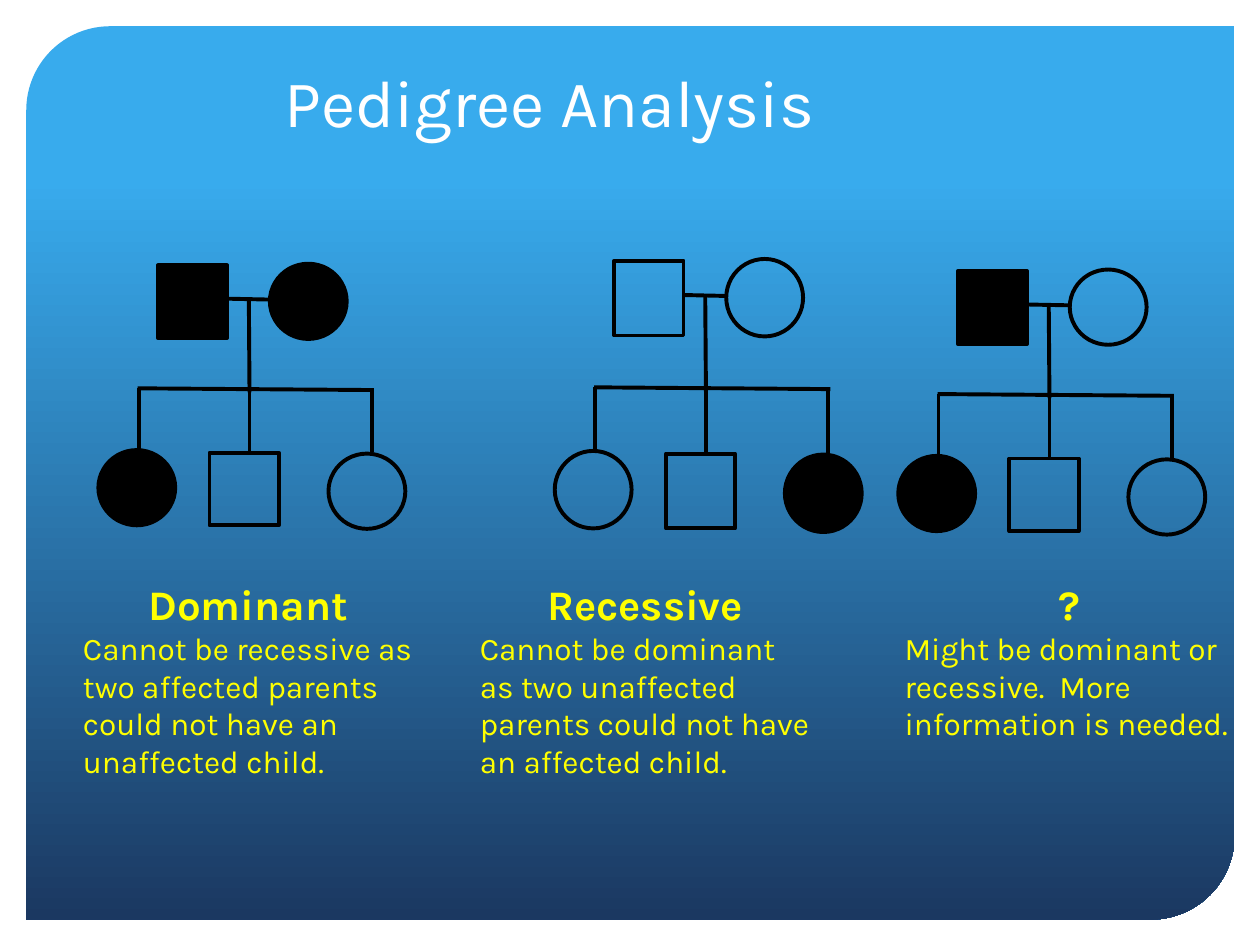
import pptx
import pptx.dml.color
import pptx.enum.shapes
import pptx.enum.text
import pptx.oxml.ns
import pptx.util
from lxml import etree

Pt = pptx.util.Pt
RGBColor = pptx.dml.color.RGBColor
SHAPE = pptx.enum.shapes.MSO_SHAPE
ALIGN = pptx.enum.text.PP_ALIGN
ANCHOR = pptx.enum.text.MSO_ANCHOR

BLACK = RGBColor(0x00, 0x00, 0x00)
WHITE = RGBColor(0xFF, 0xFF, 0xFF)
YELLOW = RGBColor(0xFF, 0xFF, 0x00)
SKY = RGBColor(0x38, 0xAB, 0xED)
NAVY = RGBColor(0x1B, 0x38, 0x61)

FONT = "Karla"
LINE_WIDTH = 2.25
TITLE = {"size": Pt(38), "bold": False}
HEADING = {"size": Pt(24), "bold": True}
BODY = {"size": Pt(18), "bold": False}

# Family members: shape, left, top, width, height within a pedigree
MALE, FEMALE = SHAPE.RECTANGLE, SHAPE.OVAL
FATHER = (MALE, 34, 1, 39.6, 41.5)
MOTHER = (FEMALE, 98, 0, 43.9, 43)
LEFT_DAUGHTER = (FEMALE, 0, 106.5, 43.9, 43)
SON = (MALE, 63.5, 108, 39.6, 41.5)
RIGHT_DAUGHTER = (FEMALE, 131.5, 108.5, 43.9, 43)
FAMILY = (FATHER, MOTHER, LEFT_DAUGHTER, RIGHT_DAUGHTER, SON)

# Family lines: start x, start y, end x, end y within a pedigree
FAMILY_LINES = (
    (73.5, 20, 98, 20.5),
    (86, 19.5, 86.4, 73.5),
    (22.5, 71.2, 157.5, 72.2),
    (86.4, 72, 86.4, 107.5),
    (23, 71.2, 23, 106.5),
    (156.3, 72, 156.3, 107.5),
)

# Pedigrees: left, top, vertical stretch, affected members
PEDIGREES = (
    (317, 148, 1.03, (RIGHT_DAUGHTER,)),
    (513.3, 154, 1, (FATHER, LEFT_DAUGHTER)),
    (56.2, 150.7, 1, (FATHER, MOTHER, LEFT_DAUGHTER)),
)

# Captions: left, heading, explanation
CAPTIONS = (
    (40.3, "Dominant", "Cannot be recessive as two affected parents "
                       "could not have an unaffected child."),
    (267.1, "Recessive", "Cannot be dominant as two unaffected parents "
                         "could not have an affected child."),
    (509.8, "?", "Might be dominant or recessive.  More information is needed."),
)


def add_background(slide):
    panel = slide.shapes.add_shape(
        SHAPE.ROUND_2_DIAG_RECTANGLE, Pt(15), Pt(15), Pt(690.5), Pt(510.5))
    panel.adjustments[0] = 0.094
    panel.adjustments[1] = 0
    panel.shadow.inherit = False
    panel.line.fill.background()
    panel.fill.gradient()
    panel.fill.gradient_angle = 270
    for stop, (position, color) in zip(panel.fill.gradient_stops,
                                       ((0.17, SKY), (1, NAVY))):
        stop.position = position
        stop.color.rgb = color


def add_text(slide, left, top, width, height, color, paragraphs, anchor=ANCHOR.TOP):
    """Add a wrapped text box; paragraphs holds (text, format, alignment)."""
    frame = slide.shapes.add_textbox(Pt(left), Pt(top), Pt(width), Pt(height)).text_frame
    frame.word_wrap = True
    frame.vertical_anchor = anchor
    for index, (text, text_format, alignment) in enumerate(paragraphs):
        paragraph = frame.add_paragraph() if index else frame.paragraphs[0]
        paragraph.text = text
        paragraph.alignment = alignment
        font = paragraph.runs[0].font
        for name, value in {"name": FONT, **text_format}.items():
            setattr(font, name, value)
        font.color.rgb = color


def draw_outline(element):
    element.line.color.rgb = BLACK
    element.line.width = Pt(LINE_WIDTH)


def add_member(group, kind, left, top, width, height, affected):
    shape = group.shapes.add_shape(kind, Pt(left), Pt(top), Pt(width), Pt(height))
    shape.shadow.inherit = False
    draw_outline(shape)
    if affected:
        shape.fill.solid()
        shape.fill.fore_color.rgb = BLACK
    else:
        shape.fill.background()


def add_line(group, *ends):
    connector = group.shapes.add_connector(
        pptx.enum.shapes.MSO_CONNECTOR.STRAIGHT, *(Pt(end) for end in ends))
    draw_outline(connector)
    properties = connector._element.spPr
    etree.SubElement(properties, pptx.oxml.ns.qn("a:effectLst"))


def add_pedigree(slide, left, top, stretch, affected):
    group = slide.shapes.add_group_shape()
    for x1, y1, x2, y2 in FAMILY_LINES:
        add_line(group, left + x1, top + y1 * stretch, left + x2, top + y2 * stretch)
    for member in FAMILY:
        kind, x, y, width, height = member
        add_member(group, kind, left + x, top + y * stretch,
                   width, height * stretch, member in affected)


def main():
    presentation = pptx.Presentation()
    presentation.slide_width = Pt(720)
    presentation.slide_height = Pt(540)
    slide = presentation.slides.add_slide(presentation.slide_layouts[6])
    add_background(slide)
    add_text(slide, 155.5, 2, 597, 82, WHITE,
             [("Pedigree Analysis", TITLE, ALIGN.LEFT)], ANCHOR.BOTTOM)
    for pedigree in PEDIGREES:
        add_pedigree(slide, *pedigree)
    for left, heading, explanation in CAPTIONS:
        add_text(slide, left, 327, 203, 124, YELLOW,
                 [(heading, HEADING, ALIGN.CENTER), (explanation, BODY, ALIGN.LEFT)])
    presentation.save("out.pptx")


if __name__ == "__main__":
    main()
